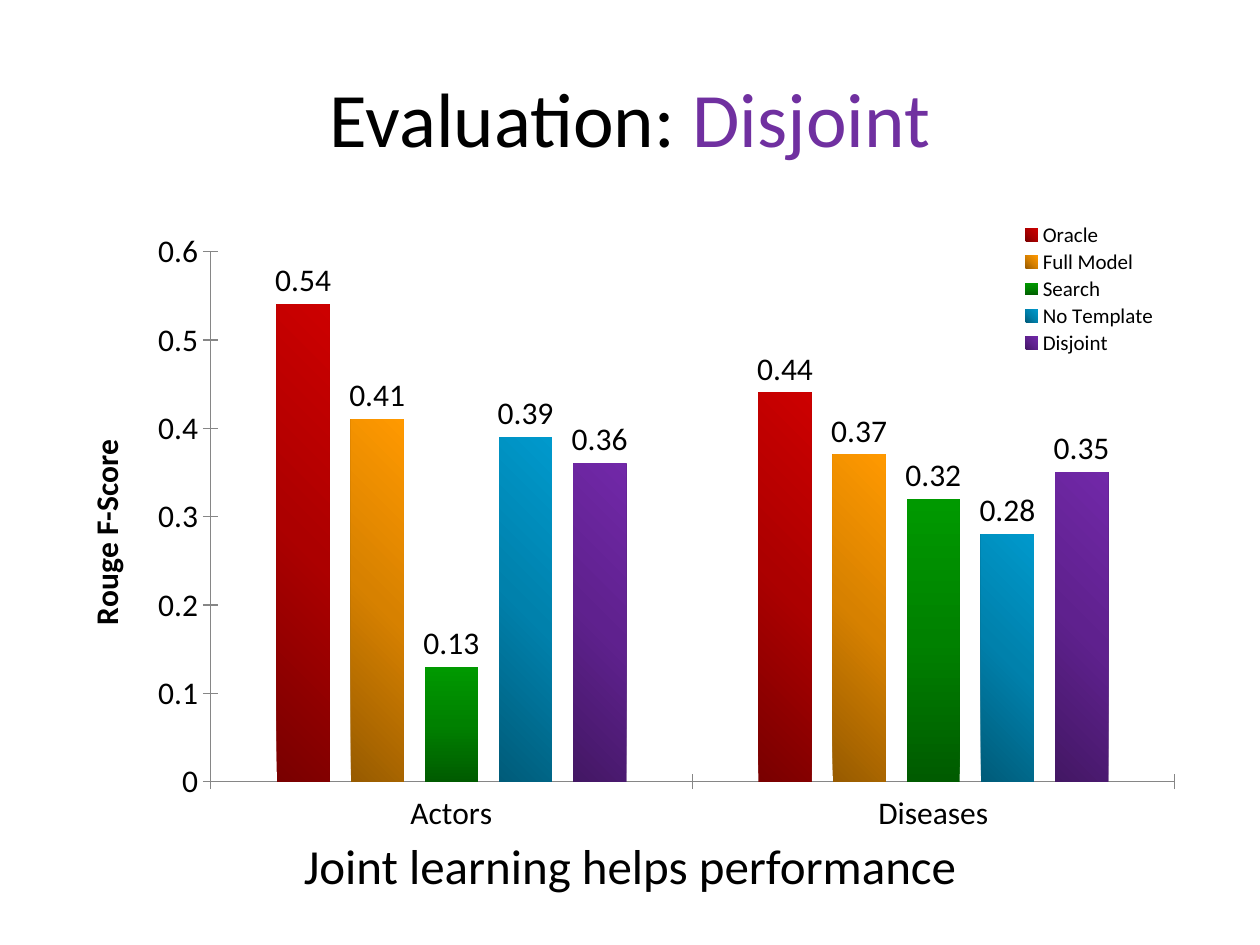
from copy import deepcopy
from typing import NamedTuple

from lxml.etree import SubElement
from pptx import Presentation
from pptx.chart.chart import Chart
from pptx.chart.data import CategoryChartData
from pptx.dml.color import RGBColor
from pptx.enum.chart import (XL_CHART_TYPE, XL_LABEL_POSITION, XL_LEGEND_POSITION,
                             XL_TICK_MARK)
from pptx.enum.text import MSO_ANCHOR, PP_ALIGN
from pptx.oxml.ns import qn
from pptx.util import Pt

FONT = "Calibri"
COLORS = {"text": "000000", "accent": "7030A0", "axis": "868686"}
CATEGORIES = ("Actors", "Diseases")


class Model(NamedTuple):
    name: str
    scores: tuple[float, float]
    gradient: tuple[str, str, str]  # dark, middle, light
    angle: int = 45


MODELS = (
    Model("Oracle", (0.54, 0.44), ("790000", "AC0000", "CC0000")),
    Model("Full Model", (0.41, 0.37), ("975B00", "D78100", "FF9900")),
    Model("Search", (0.13, 0.32), ("005B00", "008100", "009900"), 90),
    Model("No Template", (0.39, 0.28), ("005B79", "0081AC", "0099CC")),
    Model("Disjoint", (0.36, 0.35), ("431764", "5F218E", "7128A8")),
)


def color(name: str) -> RGBColor:
    return RGBColor.from_string(COLORS[name])


def style_font(font, size: float, bold: bool = False) -> None:
    font.name = FONT
    font.size = Pt(size)
    font.bold = bold
    font.color.rgb = color("text")


def fill_gradient(series, model: Model) -> None:
    fill = series.format.fill
    fill.gradient()
    fill.gradient_angle = model.angle
    stop_list = series._element.find(".//" + qn("a:gsLst"))
    stop_list.append(deepcopy(stop_list[0]))
    for stop, position, shade in zip(fill.gradient_stops, (0, 0.5, 1), model.gradient):
        stop.position = position
        stop.color.rgb = RGBColor.from_string(shade)


def place(element, left: float, top: float, width: float, height: float,
          inner: bool = False) -> None:
    """Give a plot area or legend a fixed place, in fractions of the chart."""
    layout = element.find(qn("c:layout"))
    if layout is None:
        layout = SubElement(element, qn("c:layout"))
        element.remove(layout)
        position = 1 if element.tag == qn("c:legend") else 0
        element.insert(position, layout)
    for child in list(layout):
        layout.remove(child)
    manual = SubElement(layout, qn("c:manualLayout"))
    settings = [("layoutTarget", "inner")] if inner else []
    settings += [("xMode", "edge"), ("yMode", "edge"),
                 ("x", left), ("y", top), ("w", width), ("h", height)]
    for tag, value in settings:
        SubElement(manual, qn(f"c:{tag}")).set("val", str(value))


def format_axes(chart: Chart) -> None:
    for axis in (chart.category_axis, chart.value_axis):
        axis.has_major_gridlines = False
        axis.major_tick_mark = XL_TICK_MARK.CROSS
        axis.format.line.color.rgb = color("axis")
        axis.format.line.width = Pt(0.75)
        style_font(axis.tick_labels.font, 18)
    value_axis = chart.value_axis
    value_axis.minimum_scale = 0
    value_axis.maximum_scale = 0.6
    value_axis.major_unit = 0.1
    title = value_axis.axis_title.text_frame
    title.text = "Rouge F-Score"
    style_font(title.paragraphs[0].font, 18, bold=True)


def add_score_chart(slide) -> None:
    data = CategoryChartData()
    data.categories = CATEGORIES
    for model in MODELS:
        data.add_series(model.name, model.scores)
    chart = slide.shapes.add_chart(XL_CHART_TYPE.COLUMN_CLUSTERED, Pt(36), Pt(126),
                                   Pt(648), Pt(356.4), data).chart
    chart.has_title = False
    style_font(chart.font, 18)
    format_axes(chart)

    plot = chart.plots[0]
    plot.vary_by_categories = False
    plot.gap_width = 250
    plot.overlap = -40
    for series, model in zip(plot.series, MODELS):
        fill_gradient(series, model)
        labels = series.data_labels
        labels.show_value = True
        labels.position = XL_LABEL_POSITION.OUTSIDE_END
        style_font(labels.font, 18)

    chart.has_legend = True
    chart.legend.position = XL_LEGEND_POSITION.RIGHT
    chart.legend.include_in_layout = True
    style_font(chart.legend.font, 12)
    place(chart._chartSpace.chart.plotArea, 0.13, 0.05, 0.85, 0.85, inner=True)
    place(chart.legend._element, 0.83, 0, 0.15, 0.22)


def fill_title(slide) -> None:
    title = slide.shapes.title
    title.left, title.top, title.width, title.height = Pt(36), Pt(21.6), Pt(648), Pt(90)
    title.text_frame.vertical_anchor = MSO_ANCHOR.MIDDLE
    paragraph = title.text_frame.paragraphs[0]
    paragraph.alignment = PP_ALIGN.CENTER
    for text, name in (("Evaluation:", "text"), (" Disjoint", "accent")):
        run = paragraph.add_run()
        run.text = text
        style_font(run.font, 44)
        run.font.color.rgb = color(name)


def add_conclusion(slide) -> None:
    frame = slide.shapes.add_textbox(Pt(36), Pt(473.76), Pt(648), Pt(48.24)).text_frame
    frame.word_wrap = True
    paragraph = frame.paragraphs[0]
    paragraph.text = "Joint learning helps performance"
    paragraph.alignment = PP_ALIGN.CENTER
    paragraph.space_before = Pt(5.6)
    style_font(paragraph.font, 28)
    properties = paragraph._p.get_or_add_pPr()
    properties.set("marL", str(Pt(27)))
    properties.set("indent", str(-Pt(27)))


def main() -> None:
    presentation = Presentation()
    presentation.slide_width, presentation.slide_height = Pt(720), Pt(540)
    slide = presentation.slides.add_slide(presentation.slide_layouts[5])
    fill_title(slide)
    add_score_chart(slide)
    add_conclusion(slide)
    presentation.save("out.pptx")


if __name__ == "__main__":
    main()
